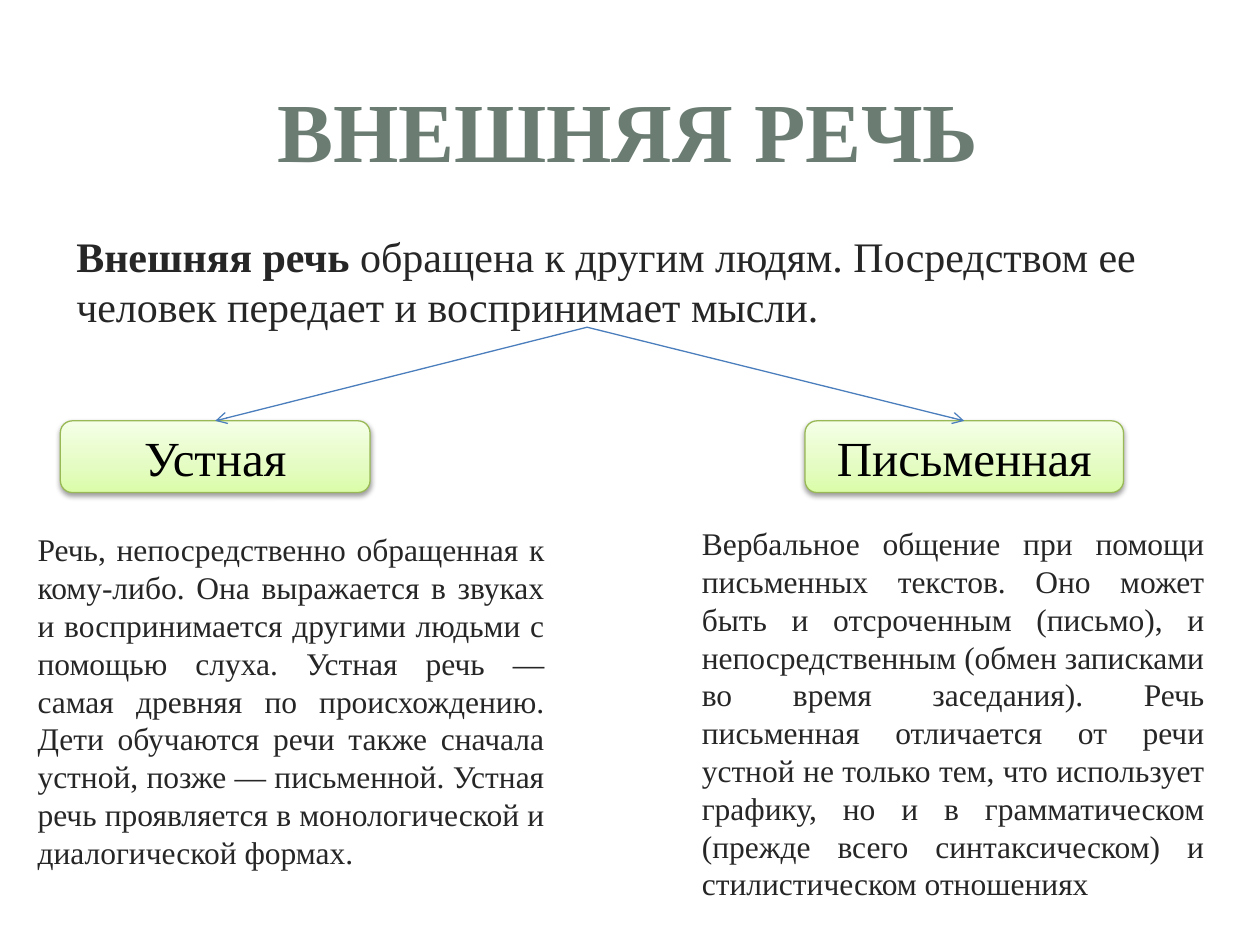
from copy import deepcopy
from dataclasses import dataclass

from lxml.etree import SubElement
from pptx import Presentation
from pptx.dml.color import RGBColor
from pptx.enum.shapes import MSO_CONNECTOR, MSO_SHAPE
from pptx.enum.text import MSO_ANCHOR, MSO_AUTO_SIZE, PP_ALIGN
from pptx.oxml.ns import qn
from pptx.util import Pt


@dataclass(frozen=True)
class Theme:
    """Colours, typeface and type sizes of the slide."""
    face: str = "Times New Roman"
    heading: str = "6B7D72"
    body: str = "262626"
    label: str = "000000"
    shadow: str = "000000"
    outline: str = "98B955"
    arrow: str = "4B7EBC"
    gradient: tuple = ((0, "DAFDA7"), (0.35, "E4FCC2"), (1, "F5FFE7"))
    heading_size: int = 48
    intro_size: int = 24
    label_size: int = 28
    body_size: int = 18


THEME = Theme()

ORAL = (
    "Речь, непосредственно обращенная к кому-либо. Она выражается в звуках "
    "и воспринимается другими людьми с помощью слуха. Устная речь — самая "
    "древняя по происхождению. Дети обучаются речи также сначала устной, "
    "позже — письменной. Устная речь проявляется в монологической и "
    "диалогической формах."
)
WRITTEN = (
    "Вербальное общение при помощи письменных текстов. Оно может быть и "
    "отсроченным (письмо), и непосредственным (обмен записками во время "
    "заседания). Речь письменная отличается от речи устной не только тем, "
    "что использует графику, но и в грамматическом (прежде всего "
    "синтаксическом) и стилистическом отношениях"
)
FORK = (335.5, 187)
BRANCHES = (
    ("Устная", (34.5, 240.5, 177, 41), ORAL, (14.4, 299.5, 304, 204)),
    ("Письменная", (460, 240.5, 182, 41), WRITTEN, (394, 296, 301.5, 225)),
)


def apply_format(target, values):
    """Set every attribute named in values on target."""
    for name, value in values.items():
        setattr(target, name, value)


def points(lengths):
    """Convert numbers to point lengths."""
    return [Pt(length) for length in lengths]


def write(frame, phrases, size, colour, align, anchor=MSO_ANCHOR.TOP):
    """Fill a text frame with one paragraph of (text, bold) phrases."""
    apply_format(frame, {"word_wrap": True, "vertical_anchor": anchor})
    paragraph = frame.paragraphs[0]
    paragraph.alignment = align
    for text, bold in phrases:
        run = paragraph.add_run()
        run.text = text
        apply_format(run.font, {"name": THEME.face, "size": Pt(size), "bold": bold})
        run.font.color.rgb = RGBColor.from_string(colour)


def add_text(slide, place, *style):
    """Add a text box written in the given style."""
    frame = slide.shapes.add_textbox(*points(place)).text_frame
    frame.auto_size = MSO_AUTO_SIZE.NONE
    write(frame, *style)


def fill_gradient(shape):
    """Fill a shape with the theme gradient, rising from the bottom."""
    shape.fill.gradient()
    shape.fill.gradient_angle = 90
    first = shape._element.spPr.find(".//" + qn("a:gs"))
    first.addnext(deepcopy(first))
    for stop, (position, colour) in zip(shape.fill.gradient_stops, THEME.gradient):
        stop.position = position
        stop.color.rgb = RGBColor.from_string(colour)


def cast_shadow(shape):
    """Give a shape a soft shadow straight below it."""
    shape.shadow.inherit = False
    effects = shape._element.spPr.find(qn("a:effectLst"))
    outer = SubElement(effects, qn("a:outerShdw"), blurRad=str(Pt(3.1)),
                       dist=str(Pt(1.6)), dir="5400000", rotWithShape="0")
    tint = SubElement(outer, qn("a:srgbClr"), val=THEME.shadow)
    SubElement(tint, qn("a:alpha"), val="38000")


def draw_line(line, colour):
    """Set a thin solid line colour."""
    line.color.rgb = RGBColor.from_string(colour)
    line.width = Pt(0.75)


def add_label(slide, place, text):
    """Add a rounded gradient box with a centred label."""
    box = slide.shapes.add_shape(MSO_SHAPE.ROUNDED_RECTANGLE, *points(place))
    fill_gradient(box)
    draw_line(box.line, THEME.outline)
    cast_shadow(box)
    write(box.text_frame, [(text, False)], THEME.label_size, THEME.label,
          PP_ALIGN.CENTER, MSO_ANCHOR.MIDDLE)


def add_arrow(slide, start, end):
    """Add a straight connector with an open arrowhead at its end."""
    arrow = slide.shapes.add_connector(MSO_CONNECTOR.STRAIGHT, *points(start + end))
    draw_line(arrow.line, THEME.arrow)
    properties = arrow._element.spPr
    SubElement(properties.find(qn("a:ln")), qn("a:tailEnd"), type="arrow")
    SubElement(properties, qn("a:effectLst"))


def main():
    """Build and save the slide."""
    deck = Presentation()
    apply_format(deck, {"slide_width": Pt(720), "slide_height": Pt(540)})
    slide = deck.slides.add_slide(deck.slide_layouts[6])
    add_text(slide, (34, 32.5, 650, 82), [("ВНЕШНЯЯ РЕЧЬ", True)],
             THEME.heading_size, THEME.heading, PP_ALIGN.CENTER, MSO_ANCHOR.MIDDLE)
    intro = [
        ("Внешняя речь ", True),
        ("обращена к другим людям. Посредством ее человек передает "
         "и воспринимает мысли.", False),
    ]
    add_text(slide, (36.5, 128.2, 658, 65.5), intro,
             THEME.intro_size, THEME.body, PP_ALIGN.LEFT)
    for label, label_place, description, description_place in BRANCHES:
        left, top, width, _ = label_place
        add_label(slide, label_place, label)
        add_arrow(slide, FORK, (left + width / 2, top))
        add_text(slide, description_place, [(description, False)],
                 THEME.body_size, THEME.body, PP_ALIGN.JUSTIFY)
    deck.save("out.pptx")


if __name__ == "__main__":
    main()
